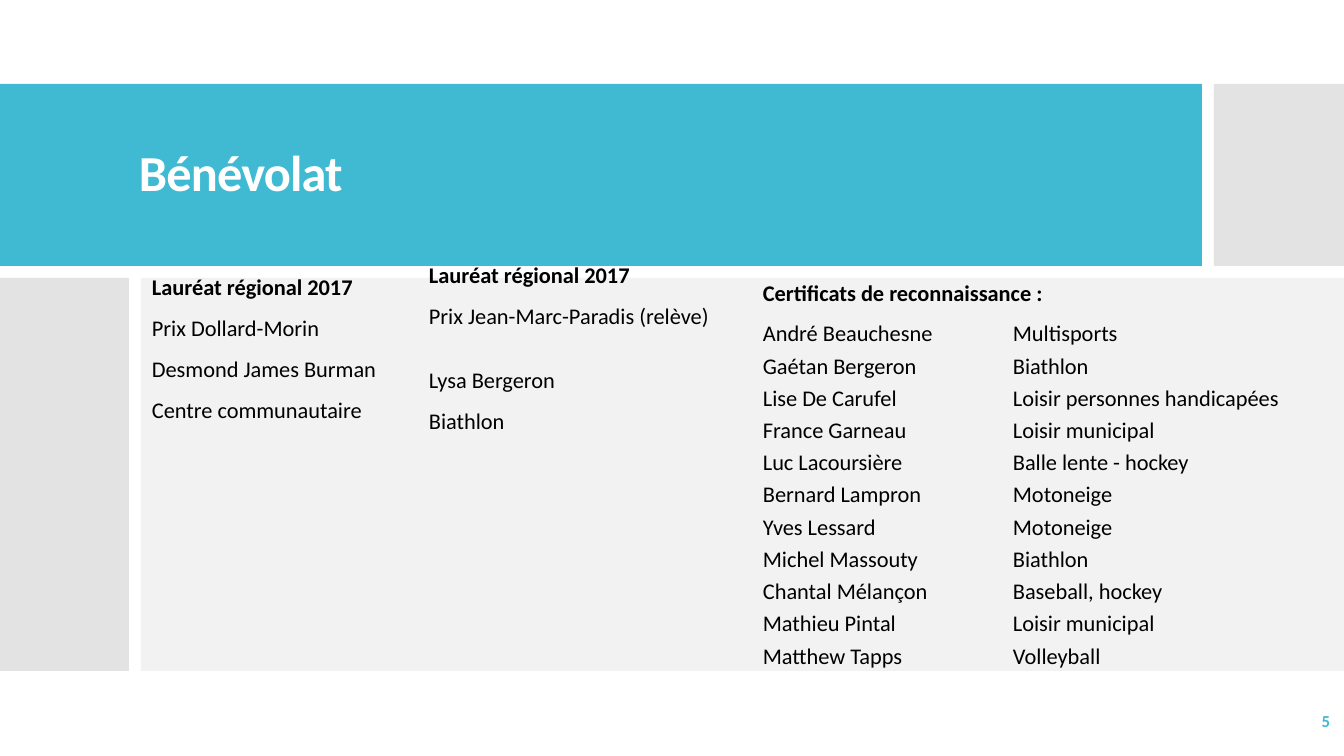
"""Build the volunteering awards slide with its laureates and recognition certificates."""
from lxml.etree import SubElement
from pptx import Presentation
from pptx.dml.color import RGBColor
from pptx.enum.shapes import MSO_SHAPE
from pptx.enum.text import MSO_ANCHOR, PP_ALIGN
from pptx.oxml.ns import qn
from pptx.util import Emu, Pt

THEME = {
    "font": "Calibri",
    "teal": "40BAD2", "grey": "C8C8C8", "panel": "F2F2F2",
    "white": "FFFFFF", "black": "000000",
    "title": 36, "body": 16, "number": 12,
}
SLIDE_W, SLIDE_H = 1344, 756
EMU_PER_PX = 914400 / 100.8


def px(length):
    return Emu(round(length * EMU_PER_PX))


def add_text(slide, box, lines, size, color, bold_lines=1, anchor=MSO_ANCHOR.TOP):
    frame = slide.shapes.add_textbox(*map(px, box)).text_frame
    frame.word_wrap = True
    frame.vertical_anchor = anchor
    frame.text = "\n".join(lines)
    for index, paragraph in enumerate(frame.paragraphs):
        font = paragraph.runs[0].font
        font.name = THEME["font"]
        font.size = Pt(THEME[size])
        font.bold = index < bold_lines
        font.color.rgb = RGBColor.from_string(THEME[color])
    return frame.paragraphs


deck = Presentation()
deck.slide_width, deck.slide_height = px(SLIDE_W), px(SLIDE_H)
slide = deck.slides.add_slide(deck.slide_layouts[6])

bands = [
    ((0, 84, 1202, 182), "teal"),
    ((1214, 84, 130, 182), "grey"),
    ((0, 278, 129, 393), "grey"),
    ((141, 278, 1203, 393), "panel"),
]
for box, color in bands:
    band = slide.shapes.add_shape(MSO_SHAPE.RECTANGLE, *map(px, box))
    band.shadow.inherit = False
    band.line.fill.background()
    band.fill.solid()
    band.fill.fore_color.rgb = RGBColor.from_string(THEME[color])
    if color == "grey":
        tint = band.fill._xPr.find(qn("a:solidFill"))[0]
        SubElement(tint, qn("a:alpha"), val="50000")

title = add_text(slide, (129, 120, 990, 110), ["Bénévolat"], "title", "white",
                 anchor=MSO_ANCHOR.MIDDLE)[0]
title.line_spacing = 0.9
title.runs[0].font._element.set("spc", "-60")

laureates = [
    ((142, 271, 301, 200),
     ["Lauréat régional 2017", "Prix Dollard-Morin", "Desmond James Burman",
      "Centre communautaire"],
     [12, 12, 12, 12]),
    ((419, 259, 333, 220),
     ["Lauréat régional 2017", "Prix Jean-Marc-Paradis (relève)", "Lysa Bergeron",
      "Biathlon"],
     [12, 12, 29, 12]),
]
for box, lines, gaps in laureates:
    for paragraph, gap in zip(add_text(slide, box, lines, "body", "black"), gaps):
        paragraph.line_spacing = 0.9
        paragraph.space_before = Pt(gap)

certificates = [
    ("André Beauchesne", "Multisports"),
    ("Gaétan Bergeron", "Biathlon"),
    ("Lise De Carufel", "Loisir personnes handicapées"),
    ("France Garneau", "Loisir municipal"),
    ("Luc Lacoursière", "Balle lente - hockey"),
    ("Bernard Lampron", "Motoneige"),
    ("Yves Lessard", "Motoneige"),
    ("Michel Massouty", "Biathlon"),
    ("Chantal Mélançon", "Baseball, hockey"),
    ("Mathieu Pintal", "Loisir municipal"),
    ("Matthew Tapps", "Volleyball"),
]
heading, *recipients = add_text(
    slide, (753, 272, 590, 402),
    ["Certificats de reconnaissance :"] + ["\t".join(row) for row in certificates],
    "body", "black")
heading.line_spacing = 1.07
heading.space_after = Pt(6)
for recipient in recipients:
    recipient.line_spacing = 1.2
    tab_stops = SubElement(recipient._p.get_or_add_pPr(), qn("a:tabLst"))
    SubElement(tab_stops, qn("a:tab"), pos=str(px(250)), algn="l")

page_number = add_text(slide, (1172, 701, 168, 40), ["5"], "number", "teal",
                       anchor=MSO_ANCHOR.MIDDLE)[0]
page_number.alignment = PP_ALIGN.RIGHT

deck.save("out.pptx")
